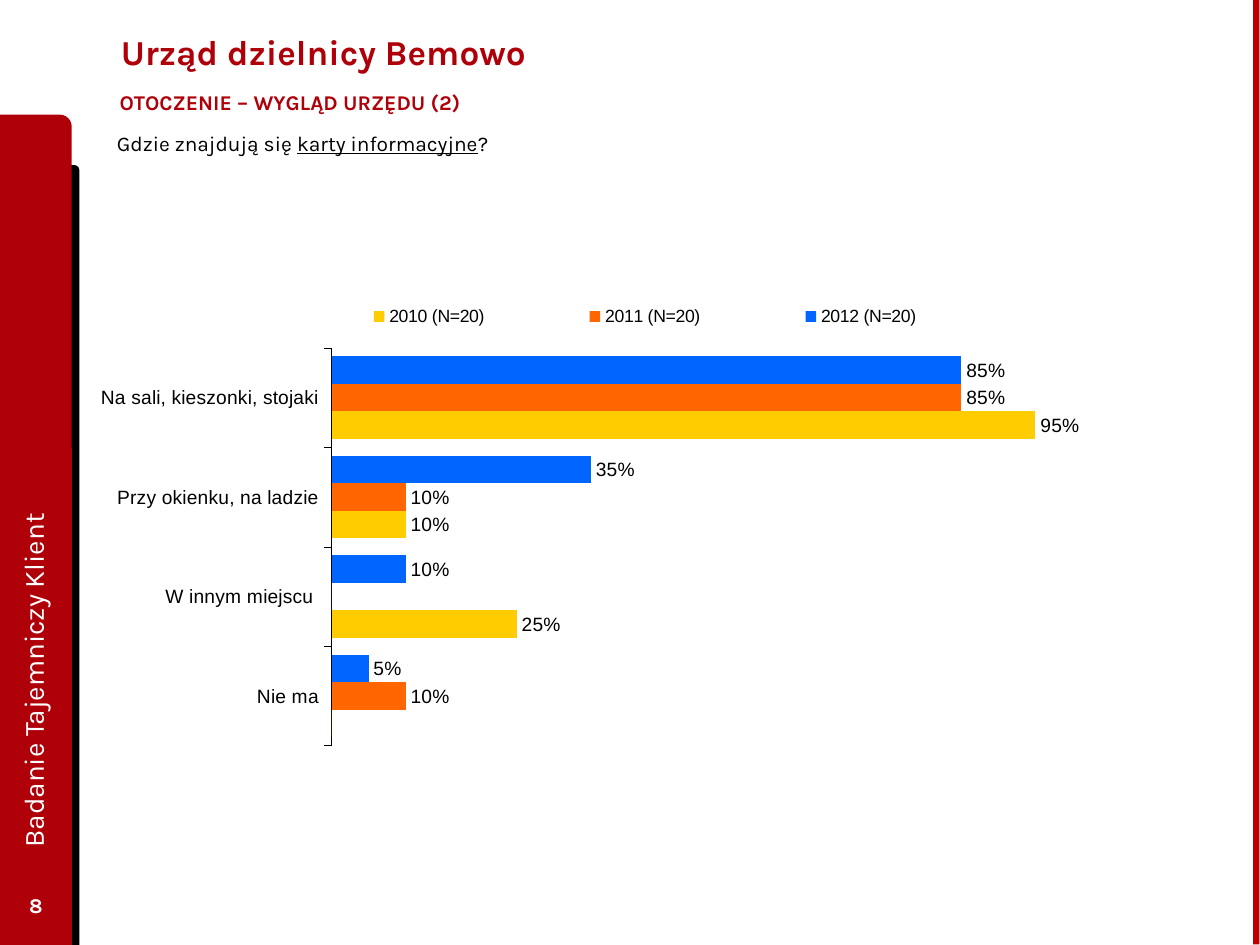
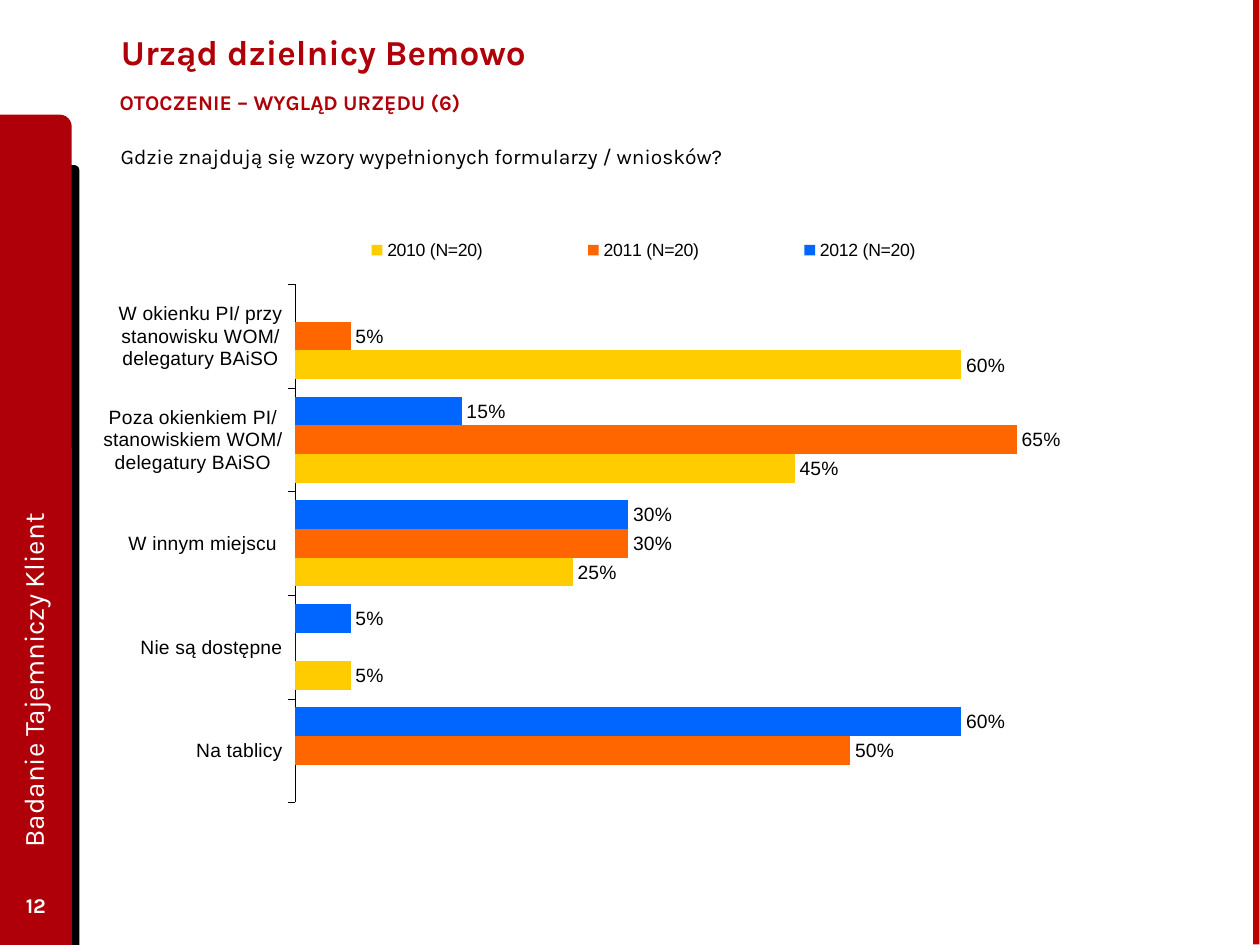
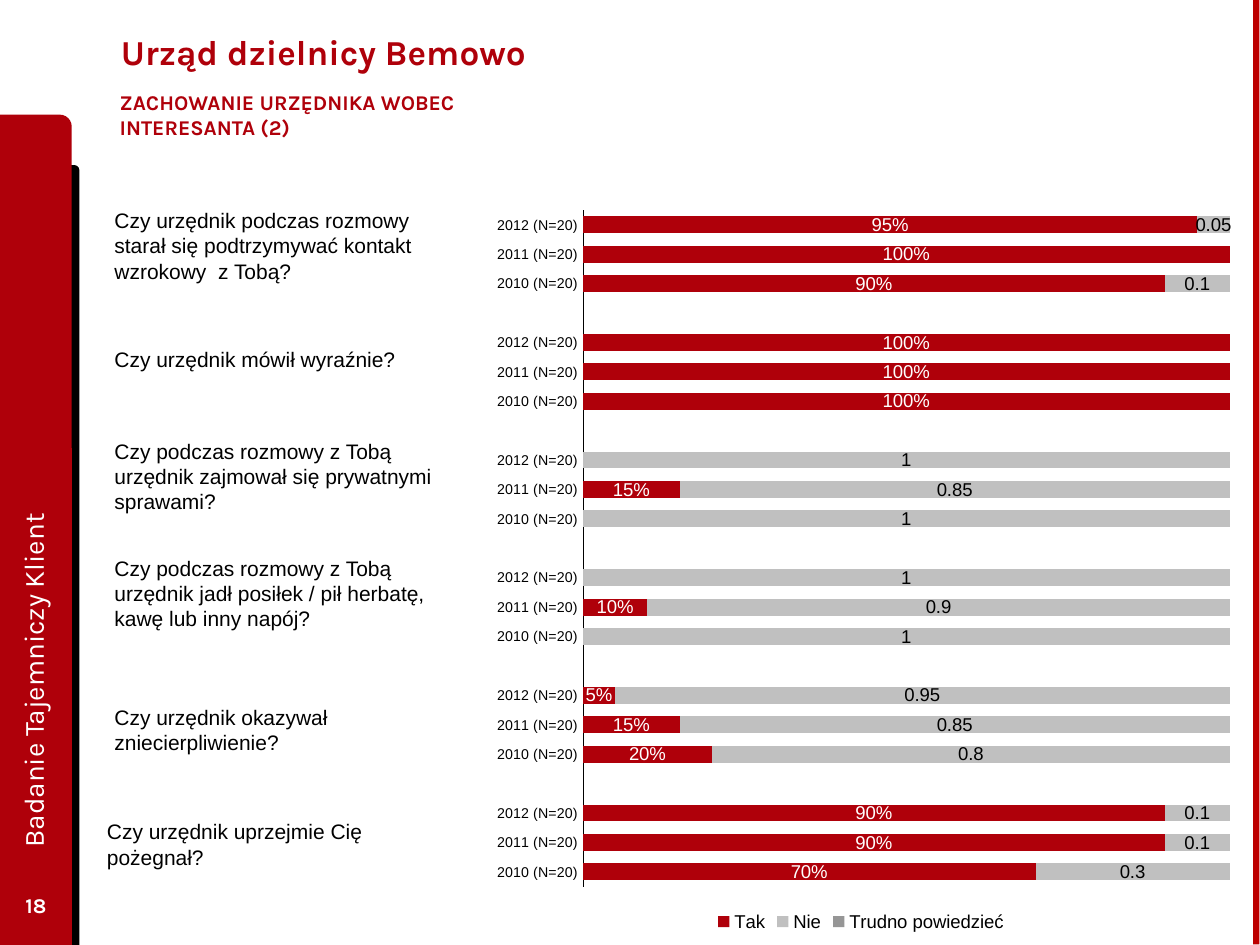
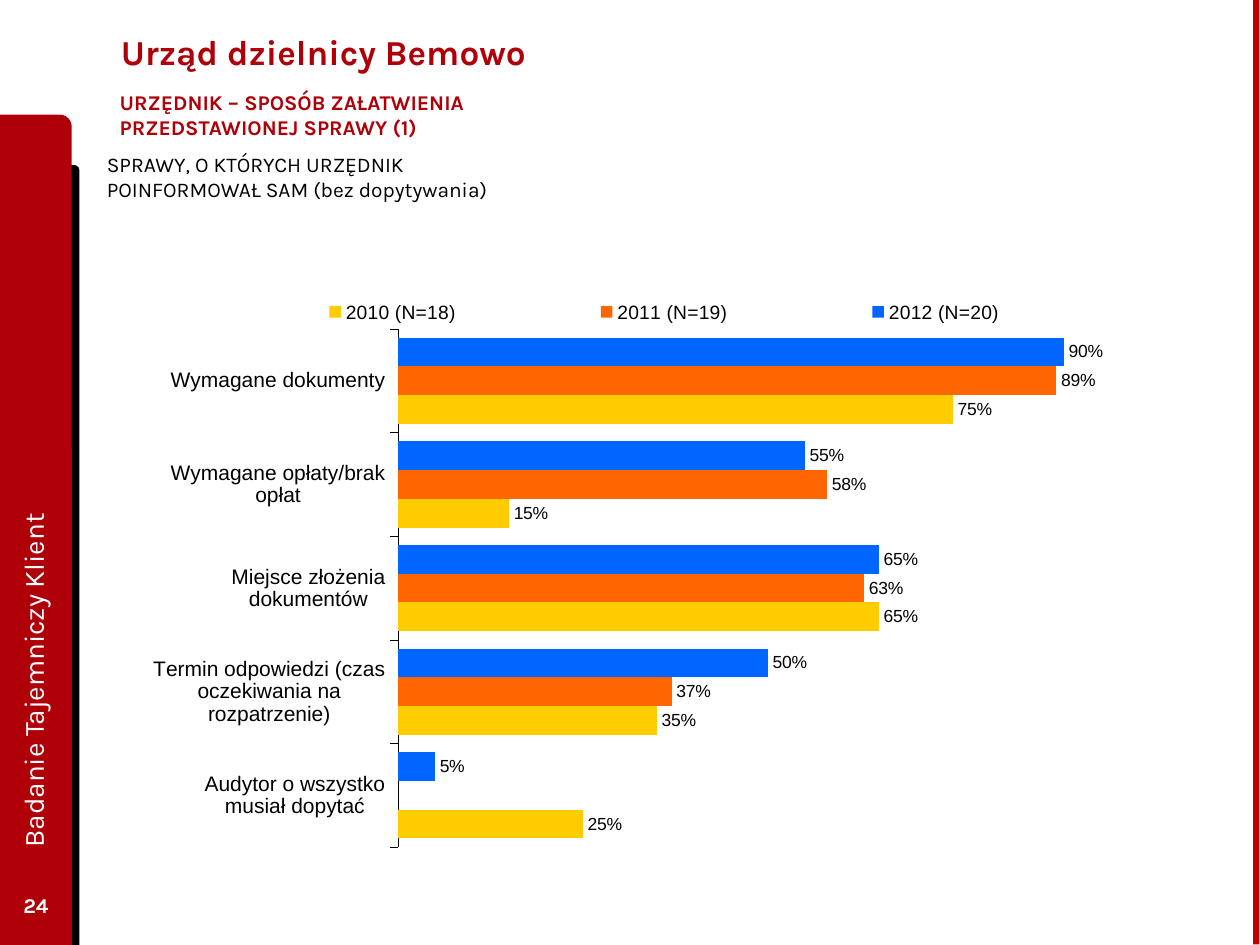
from dataclasses import dataclass

from lxml import etree
from pptx import Presentation
from pptx.chart.chart import Chart
from pptx.chart.data import CategoryChartData
from pptx.dml.color import RGBColor
from pptx.enum.chart import (
    XL_CHART_TYPE, XL_LABEL_POSITION, XL_LEGEND_POSITION, XL_TICK_LABEL_POSITION, XL_TICK_MARK,
)
from pptx.enum.shapes import MSO_SHAPE
from pptx.enum.text import MSO_ANCHOR, MSO_AUTO_SIZE, PP_ALIGN
from pptx.oxml.ns import qn
from pptx.slide import Slide, SlideLayout
from pptx.text.text import Font, TextFrame
from pptx.util import Emu, Pt

CLUSTERED, STACKED = XL_CHART_TYPE.BAR_CLUSTERED, XL_CHART_TYPE.BAR_STACKED
OUTSIDE_END, LABEL_CENTER = XL_LABEL_POSITION.OUTSIDE_END, XL_LABEL_POSITION.CENTER
LEGEND_TOP, LEGEND_RIGHT = XL_LEGEND_POSITION.TOP, XL_LEGEND_POSITION.RIGHT
LEGEND_BOTTOM = XL_LEGEND_POSITION.BOTTOM
TICK_NONE, TICK_OUTSIDE = XL_TICK_MARK.NONE, XL_TICK_MARK.OUTSIDE
NO_TICK_LABELS = XL_TICK_LABEL_POSITION.NONE
ROUNDED_CORNER, RECTANGLE = MSO_SHAPE.ROUND_1_RECTANGLE, MSO_SHAPE.RECTANGLE
MIDDLE, TOP = MSO_ANCHOR.MIDDLE, MSO_ANCHOR.TOP
LEFT, CENTER = PP_ALIGN.LEFT, PP_ALIGN.CENTER
FIT_SHAPE = MSO_AUTO_SIZE.SHAPE_TO_FIT_TEXT

PX_PER_INCH = 100
EMU_PER_PX = 914400 // PX_PER_INCH
TITLE_ONLY = 5

Values = tuple[float | None, ...]
Runs = tuple[tuple[str, bool], ...]


@dataclass(frozen=True)
class Theme:
    heading_font: str = "Karla"
    chart_font: str = "Arial"
    red: str = "AF000A"
    edge_red: str = "BD0000"
    black: str = "000000"
    white: str = "FFFFFF"
    blue: str = "0066FF"
    orange: str = "FF6600"
    yellow: str = "FFCC00"
    silver: str = "C0C0C0"
    grey: str = "969696"
    title_size: float = 20
    side_size: float = 16
    body_size: float = 12
    chart_size: float = 11
    legend_size: float = 10.1
    stacked_size: float = 10.6
    year_size: float = 8.1
    small_label_size: float = 10
    axis_line: float = 0.23


THEME = Theme()


@dataclass(frozen=True)
class Box:
    left: int
    top: int
    width: int
    height: int

    def emu(self) -> tuple[Emu, Emu, Emu, Emu]:
        return px(self.left), px(self.top), px(self.width), px(self.height)


@dataclass(frozen=True)
class Band:
    box: Box
    shape_type: MSO_SHAPE
    color: str
    rotation: int = 0


@dataclass(frozen=True)
class TextStyle:
    size: float = THEME.body_size
    color: str = THEME.black
    font: str = THEME.heading_font
    bold: bool = False
    anchor: MSO_ANCHOR = TOP
    align: PP_ALIGN = LEFT
    grow: bool = False


@dataclass(frozen=True)
class TextBlock:
    box: Box
    runs: Runs
    style: TextStyle


@dataclass(frozen=True)
class Layout:
    x: float
    y: float
    w: float | None = None
    h: float | None = None


@dataclass(frozen=True)
class Series:
    name: str
    values: Values
    color: str
    label_color: str | None = THEME.black
    label_format: str = "0%"


@dataclass(frozen=True)
class BarChart:
    box: Box
    categories: tuple[str, ...]
    series: tuple[Series, ...]
    plot: Layout
    legend: Layout
    legend_position: XL_LEGEND_POSITION = LEGEND_TOP
    legend_size: float = THEME.legend_size
    category_size: float = THEME.chart_size
    label_size: float = THEME.chart_size
    maximum: float | None = None
    stacked: bool = False


@dataclass(frozen=True)
class Page:
    number: int
    subtitle: str
    questions: tuple[TextBlock, ...]
    chart: BarChart


TITLE_STYLE = TextStyle(THEME.title_size, THEME.red, bold=True, anchor=MIDDLE)
SUBTITLE_STYLE = TextStyle(color=THEME.red, bold=True)
NUMBER_STYLE = TextStyle(color=THEME.white, bold=True, anchor=MIDDLE, align=CENTER)
SIDE_STYLE = TextStyle(THEME.side_size, THEME.white, anchor=MIDDLE)
QUESTION_STYLE = TextStyle(grow=True)
ROW_STYLE = TextStyle(font=THEME.chart_font, grow=True)

TITLE = "Urząd dzielnicy Bemowo"
SIDE_TITLE = "Badanie Tajemniczy Klient"
TITLE_BOX = Box(86, 5, 777, 72)
SUBTITLE_BOX = Box(75, 66, 385, 33)
NUMBER_BOX = Box(0, 698, 57, 40)
SIDE_BOX = Box(-262, 369, 576, 51)
BANDS = (
    Band(Box(39, 131, 24, 619), ROUNDED_CORNER, THEME.black),
    Band(Box(0, 91, 57, 659), ROUNDED_CORNER, THEME.red),
    Band(Box(622, 372, 750, 5), RECTANGLE, THEME.edge_red, 90),
)


def px(length: int) -> Emu:
    return Emu(length * EMU_PER_PX)


def plain(text: str) -> Runs:
    return ((text, False),)


def year_series(counts: tuple[int, int, int], *rows: Values) -> tuple[Series, ...]:
    colors = (THEME.blue, THEME.orange, THEME.yellow)
    return tuple(
        Series(f"{year} (N={count})", values, color)
        for year, count, values, color in zip((2012, 2011, 2010), counts, rows, colors)
    )


def answer_series(yes_groups: tuple[Values, ...], no_groups: tuple[Values, ...]) -> tuple[Series, ...]:
    yes, no = join_groups(yes_groups), join_groups(no_groups)
    return (
        Series("Tak", yes, THEME.red, THEME.white),
        Series("Nie", no, THEME.silver, label_format="General"),
        Series("Trudno powiedzieć", (None,) * len(yes), THEME.grey, None),
    )


def join_groups(groups: tuple[tuple, ...], gap: str | None = None) -> tuple:
    joined = groups[0]
    for group in groups[1:]:
        joined += (gap, *group)
    return joined


def style_font(font: Font, size: float, color: str, name: str, bold: bool = False) -> None:
    font.size = Pt(size)
    font.color.rgb = RGBColor.from_string(color)
    font.name = name
    font.bold = bold


def write_text(frame: TextFrame, runs: Runs, style: TextStyle) -> None:
    frame.word_wrap = True
    frame.vertical_anchor = style.anchor
    if style.grow:
        frame.auto_size = FIT_SHAPE
    paragraph = frame.paragraphs[0]
    paragraph.alignment = style.align
    style_font(paragraph.font, style.size, style.color, style.font, style.bold)
    for text, underlined in runs:
        run = paragraph.add_run()
        run.text = text
        if underlined:
            run.font.underline = True


def add_text(slide: Slide, block: TextBlock, rotation: int = 0) -> TextFrame:
    shape = slide.shapes.add_textbox(*block.box.emu())
    shape.rotation = rotation
    write_text(shape.text_frame, block.runs, block.style)
    return shape.text_frame


def add_heading(slide: Slide, subtitle: str) -> None:
    title = slide.shapes.title
    title.left, title.top, title.width, title.height = TITLE_BOX.emu()
    write_text(title.text_frame, plain(TITLE), TITLE_STYLE)
    frame = add_text(slide, TextBlock(SUBTITLE_BOX, plain(subtitle), SUBTITLE_STYLE))
    frame.word_wrap = False
    frame.margin_left = frame.margin_right = px(20)


def add_footer(slide: Slide, number: int) -> None:
    add_text(slide, TextBlock(NUMBER_BOX, plain(str(number)), NUMBER_STYLE))
    add_text(slide, TextBlock(SIDE_BOX, plain(SIDE_TITLE), SIDE_STYLE), 270)


def move_bands_to_layout(slide: Slide, layout: SlideLayout) -> None:
    for placeholder in list(layout.placeholders)[1:]:
        placeholder.element.getparent().remove(placeholder.element)
    for position, band in enumerate(BANDS, 2):
        shape = slide.shapes.add_shape(band.shape_type, *band.box.emu())
        shape.rotation = band.rotation
        shape.shadow.inherit = False
        shape.fill.solid()
        shape.fill.fore_color.rgb = RGBColor.from_string(band.color)
        shape.line.fill.background()
        layout.element.cSld.spTree.insert(position, shape.element)


def set_layout(parent: etree.ElementBase, position: int, area: Layout, inner: bool = False) -> None:
    for old_layout in parent.findall(qn("c:layout")):
        parent.remove(old_layout)
    layout = etree.Element(qn("c:layout"))
    parent.insert(position, layout)
    manual = etree.SubElement(layout, qn("c:manualLayout"))
    settings = [("layoutTarget", "inner")] if inner else []
    settings += [("xMode", "edge"), ("yMode", "edge")]
    sizes = (("x", area.x), ("y", area.y), ("w", area.w), ("h", area.h))
    settings += [(name, str(size)) for name, size in sizes if size is not None]
    for name, value in settings:
        etree.SubElement(manual, qn(f"c:{name}")).set("val", value)


def hide_zero_labels(chart: Chart, series_number: int, values: Values) -> None:
    labels = chart.element.xpath(f".//c:ser[{series_number}]/c:dLbls")[0]
    zeros = [index for index, value in enumerate(values) if value == 0]
    for position, index in enumerate(zeros):
        label = etree.Element(qn("c:dLbl"))
        etree.SubElement(label, qn("c:idx")).set("val", str(index))
        etree.SubElement(label, qn("c:delete")).set("val", "1")
        labels.insert(position, label)


def format_axes(chart: Chart, design: BarChart) -> None:
    category_axis, value_axis = chart.category_axis, chart.value_axis
    category_axis.reverse_order = True
    category_axis.has_major_gridlines = False
    category_axis.major_tick_mark = TICK_NONE if design.stacked else TICK_OUTSIDE
    category_axis.format.line.color.rgb = RGBColor.from_string(THEME.black)
    category_axis.format.line.width = Pt(THEME.axis_line)
    style_font(category_axis.tick_labels.font, design.category_size, THEME.black, THEME.chart_font)
    value_axis.has_major_gridlines = False
    value_axis.minimum_scale = 0
    if design.maximum:
        value_axis.maximum_scale = design.maximum
        value_axis.major_unit = 0.2
    value_axis.tick_labels.number_format = "0%"
    value_axis.tick_labels.number_format_is_linked = False
    if design.stacked:
        value_axis.tick_label_position = NO_TICK_LABELS
        value_axis.major_tick_mark = TICK_NONE
        value_axis.format.line.fill.background()
    else:
        value_axis.visible = False


def format_series(chart: Chart, design: BarChart) -> None:
    plot = chart.plots[0]
    plot.vary_by_categories = False
    plot.gap_width = 75 if design.stacked else 60
    if design.stacked:
        plot.overlap = 100
    for number, (bars, series) in enumerate(zip(plot.series, design.series), 1):
        bars.invert_if_negative = False
        bars.format.fill.solid()
        bars.format.fill.fore_color.rgb = RGBColor.from_string(series.color)
        if series.label_color is None:
            continue
        labels = bars.data_labels
        labels.show_value = True
        labels.number_format = series.label_format
        labels.number_format_is_linked = False
        labels.position = LABEL_CENTER if design.stacked else OUTSIDE_END
        style_font(labels.font, design.label_size, series.label_color, THEME.chart_font)
        hide_zero_labels(chart, number, series.values)


def format_legend(chart: Chart, design: BarChart) -> None:
    chart.has_legend = True
    legend = chart.legend
    legend.position = design.legend_position
    legend.include_in_layout = False
    style_font(legend.font, design.legend_size, THEME.black, THEME.chart_font)
    set_layout(chart.element.xpath(".//c:legend")[0], 1, design.legend)


def add_bar_chart(slide: Slide, design: BarChart) -> None:
    data = CategoryChartData(number_format="0%")
    data.categories = design.categories
    for series in design.series:
        data.add_series(series.name, series.values, series.label_format)
    chart_type = STACKED if design.stacked else CLUSTERED
    chart = slide.shapes.add_chart(chart_type, *design.box.emu(), data).chart
    chart.has_title = False
    style_font(chart.font, design.label_size, THEME.black, THEME.chart_font)
    format_axes(chart, design)
    format_series(chart, design)
    format_legend(chart, design)
    set_layout(chart.element.xpath(".//c:plotArea")[0], 0, design.plot, inner=True)


INFORMATION_CARDS = Page(
    8,
    "OTOCZENIE – WYGLĄD URZĘDU (2)",
    (
        TextBlock(
            Box(83, 99, 615, 30),
            (("Gdzie znajdują się ", False), ("karty informacyjne", True), ("?", False)),
            QUESTION_STYLE,
        ),
    ),
    BarChart(
        Box(80, 237, 907, 355),
        ("Na sali, kieszonki, stojaki", "Przy okienku, na ladzie", "W innym miejscu ", "Nie ma"),
        year_series(
            (20, 20, 20), (0.85, 0.35, 0.1, 0.05), (0.85, 0.1, 0, 0.1), (0.95, 0.1, 0.25, 0)
        ),
        plot=Layout(0.2, 0.11, 0.65, 0.89),
        legend=Layout(0.15, 0, 0.65, 0.08),
    ),
)

FORM_TEMPLATES = Page(
    12,
    "OTOCZENIE – WYGLĄD URZĘDU (6)",
    (
        TextBlock(
            Box(86, 109, 647, 30),
            plain("Gdzie znajdują się wzory wypełnionych formularzy / wniosków?"),
            QUESTION_STYLE,
        ),
    ),
    BarChart(
        Box(80, 185, 907, 452),
        (
            "W okienku PI/ przy stanowisku WOM/ delegatury BAiSO",
            "Poza okienkiem PI/ stanowiskiem WOM/ delegatury BAiSO",
            "W innym miejscu ",
            "Nie są dostępne",
            "Na tablicy",
        ),
        year_series(
            (20, 20, 20),
            (None, 0.15, 0.3, 0.05, 0.6),
            (0.05, 0.65, 0.3, 0, 0.5),
            (0.6, 0.45, 0.25, 0.05, None),
        ),
        plot=Layout(0.17, 0.09, 0.68, 0.91),
        legend=Layout(0.15, 0, 0.65, 0.06),
    ),
)

BEHAVIOUR_ROWS = (
    (Box(81, 160, 272, 70), "Czy urzędnik podczas rozmowy starał się podtrzymywać kontakt wzrokowy  z Tobą?"),
    (Box(81, 270, 272, 30), "Czy urzędnik mówił wyraźnie?"),
    (Box(81, 343, 272, 70), "Czy podczas rozmowy z Tobą urzędnik zajmował się prywatnymi sprawami?"),
    (Box(81, 436, 272, 70), "Czy podczas rozmowy z Tobą urzędnik jadł posiłek / pił herbatę, kawę lub inny napój?"),
    (Box(81, 554, 272, 50), "Czy urzędnik okazywał zniecierpliwienie?"),
    (Box(75, 645, 272, 50), "Czy urzędnik uprzejmie Cię pożegnał?"),
)

BEHAVIOUR = Page(
    18,
    "ZACHOWANIE URZĘDNIKA WOBEC INTERESANTA (2)",
    tuple(TextBlock(box, plain(text), ROW_STYLE) for box, text in BEHAVIOUR_ROWS),
    BarChart(
        Box(384, 155, 604, 590),
        join_groups((("2012 (N=20)", "2011 (N=20)", "2010 (N=20)"),) * len(BEHAVIOUR_ROWS), ""),
        answer_series(
            (
                (0.95, 1, 0.9),
                (1, 1, 1),
                (None, 0.15, None),
                (None, 0.1, None),
                (0.05, 0.15, 0.2),
                (0.9, 0.9, 0.7),
            ),
            (
                (0.05, None, 0.1),
                (None, None, None),
                (1, 0.85, 1),
                (1, 0.9, 1),
                (0.95, 0.85, 0.8),
                (0.1, 0.1, 0.3),
            ),
        ),
        plot=Layout(0.13, 0.02, 0.85, 0.91),
        legend=Layout(0.3, 0.96),
        legend_position=LEGEND_BOTTOM,
        legend_size=THEME.stacked_size,
        category_size=THEME.year_size,
        label_size=THEME.stacked_size,
        maximum=1,
        stacked=True,
    ),
)

CASE_HANDLING = Page(
    24,
    "URZĘDNIK – SPOSÓB ZAŁATWIENIA PRZEDSTAWIONEJ SPRAWY (1)",
    (
        TextBlock(
            Box(75, 115, 323, 71),
            plain("SPRAWY, O KTÓRYCH URZĘDNIK POINFORMOWAŁ SAM (bez dopytywania)"),
            QUESTION_STYLE,
        ),
    ),
    BarChart(
        Box(120, 225, 783, 452),
        (
            "Wymagane dokumenty",
            "Wymagane opłaty/brak opłat",
            "Miejsce złożenia dokumentów",
            "Termin odpowiedzi (czas oczekiwania na rozpatrzenie)",
            "Audytor o wszystko musiał dopytać",
        ),
        year_series(
            (20, 19, 18),
            (0.9, 0.55, 0.65, 0.5, 0.05),
            (0.89, 0.58, 0.63, 0.37, None),
            (0.75, 0.15, 0.65, 0.35, 0.25),
        ),
        plot=Layout(0.25, 0.08, 0.75, 0.91),
        legend=Layout(0.04, 0.01, 0.96, 0.08),
        legend_position=LEGEND_RIGHT,
        legend_size=THEME.chart_size,
        category_size=THEME.body_size,
        label_size=THEME.small_label_size,
        maximum=1,
    ),
)


def main() -> None:
    presentation = Presentation()
    presentation.slide_width, presentation.slide_height = px(1000), px(750)
    layout = presentation.slide_layouts[TITLE_ONLY]
    for index, page in enumerate((INFORMATION_CARDS, FORM_TEMPLATES, BEHAVIOUR, CASE_HANDLING)):
        slide = presentation.slides.add_slide(layout)
        if index == 0:
            move_bands_to_layout(slide, layout)
        add_heading(slide, page.subtitle)
        add_bar_chart(slide, page.chart)
        for question in page.questions:
            add_text(slide, question)
        add_footer(slide, page.number)
    presentation.save("out.pptx")


if __name__ == "__main__":
    main()
